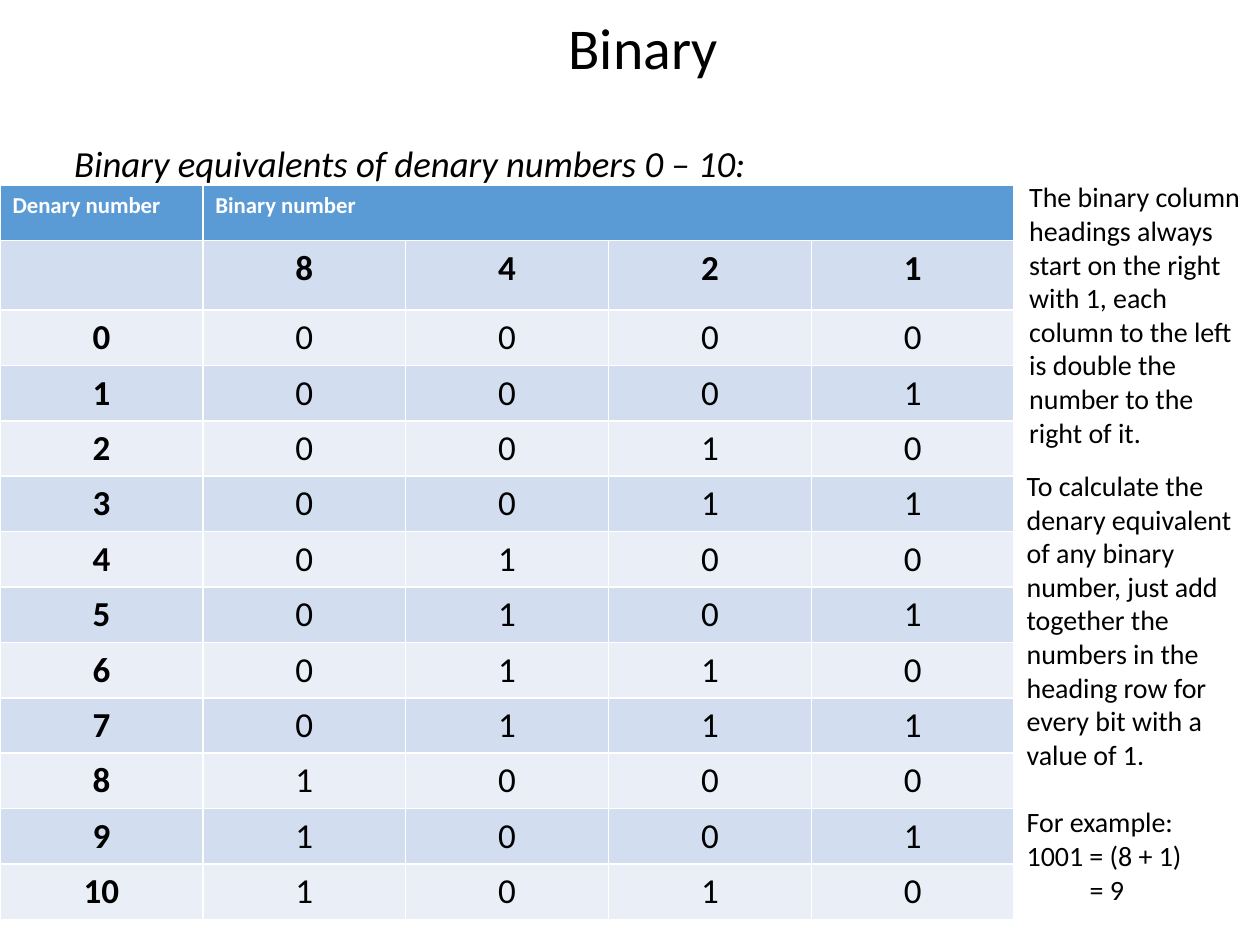
"""Builds a slide with the binary equivalents of the denary numbers 0 to 10."""
from pptx import Presentation
from pptx.dml.color import RGBColor
from pptx.enum.text import MSO_ANCHOR, PP_ALIGN
from pptx.util import Inches, Pt

LEFT, CENTER = PP_ALIGN.LEFT, PP_ALIGN.CENTER
TOP, MIDDLE = MSO_ANCHOR.TOP, MSO_ANCHOR.MIDDLE
COLORS = {"text": "000000", "head": "5B9BD5", "head_text": "FFFFFF",
          "dark": "D2DEEF", "light": "EAEFF7"}
COL, ROW, PLACE_ROW = 1.61, 0.44, 0.55
PLACES = [8, 4, 2, 1]
LAST = 10


def write(p, text, size, color="text", align=LEFT, **style):
    p.alignment = align
    r = p.add_run()
    r.text = text
    r.font.color.rgb = RGBColor.from_string(COLORS[color])
    for name, value in {"name": "Calibri", "size": Pt(size), **style}.items():
        setattr(r.font, name, value)


def add_text(s, box, anchor=TOP):
    tf = s.shapes.add_textbox(*map(Inches, box)).text_frame
    tf.word_wrap = True
    tf.vertical_anchor = anchor
    return tf


prs = Presentation()
prs.slide_width, prs.slide_height = Inches(10), Inches(7.5)
s = prs.slides.add_slide(prs.slide_layouts[6])

p = add_text(s, (2.87, 0.03, 4.47, 0.75), MIDDLE).paragraphs[0]
p.line_spacing = 0.9
write(p, "Binary", 33, align=CENTER)

p = add_text(s, (0.49, 1.11, 8.62, 0.49)).paragraphs[0]
p.line_spacing = 0.9
write(p, "Binary equivalents of denary numbers 0 – 10:", 21, italic=True)

rows = [["Denary number", "Binary number", "", "", ""], ["", *PLACES]]
rows += [[n, *(n // place % 2 for place in PLACES)] for n in range(LAST + 1)]
heights = [ROW, PLACE_ROW] + [ROW] * (LAST + 1)
cols = len(PLACES) + 1
table = s.shapes.add_table(len(rows), cols, 0, Inches(1.47),
                           Inches(cols * COL), Inches(sum(heights))).table
for column in table.columns:
    column.width = Inches(COL)
table.cell(0, 1).merge(table.cell(0, cols - 1))
for i, values in enumerate(rows):
    table.rows[i].height = Inches(heights[i])
    fill = "head" if i == 0 else "dark" if i % 2 else "light"
    for j, value in enumerate(values):
        cell = table.cell(i, j)
        cell.fill.solid()
        cell.fill.fore_color.rgb = RGBColor.from_string(COLORS[fill])
        if value == "":
            continue
        p = cell.text_frame.paragraphs[0]
        if i == 0:
            write(p, value, 13, "head_text", bold=True)
        else:
            write(p, str(value), 20, align=CENTER, bold=i == 1 or j == 0)

tf = add_text(s, (8.07, 1.38, 1.91, 2.26))
write(tf.paragraphs[0], "The binary column headings always start on the right with 1, "
      "each column to the left is double the number to the right of it.", 16)

tf = add_text(s, (8.05, 3.67, 2.04, 3.6))
write(tf.paragraphs[0], "To calculate the denary equivalent of any binary number, just add "
      "together the numbers in the heading row for every bit with a value of 1.", 16)
for text, before, indent in [("For example:", 19.5, 0), ("1001 = (8 + 1)", 0, 0),
                             ("= 9", 0, 0.5)]:
    p = tf.add_paragraph()
    p.space_before = Pt(before)
    p._p.get_or_add_pPr().set("marL", str(Inches(indent)))
    write(p, text, 16)

prs.save("out.pptx")
